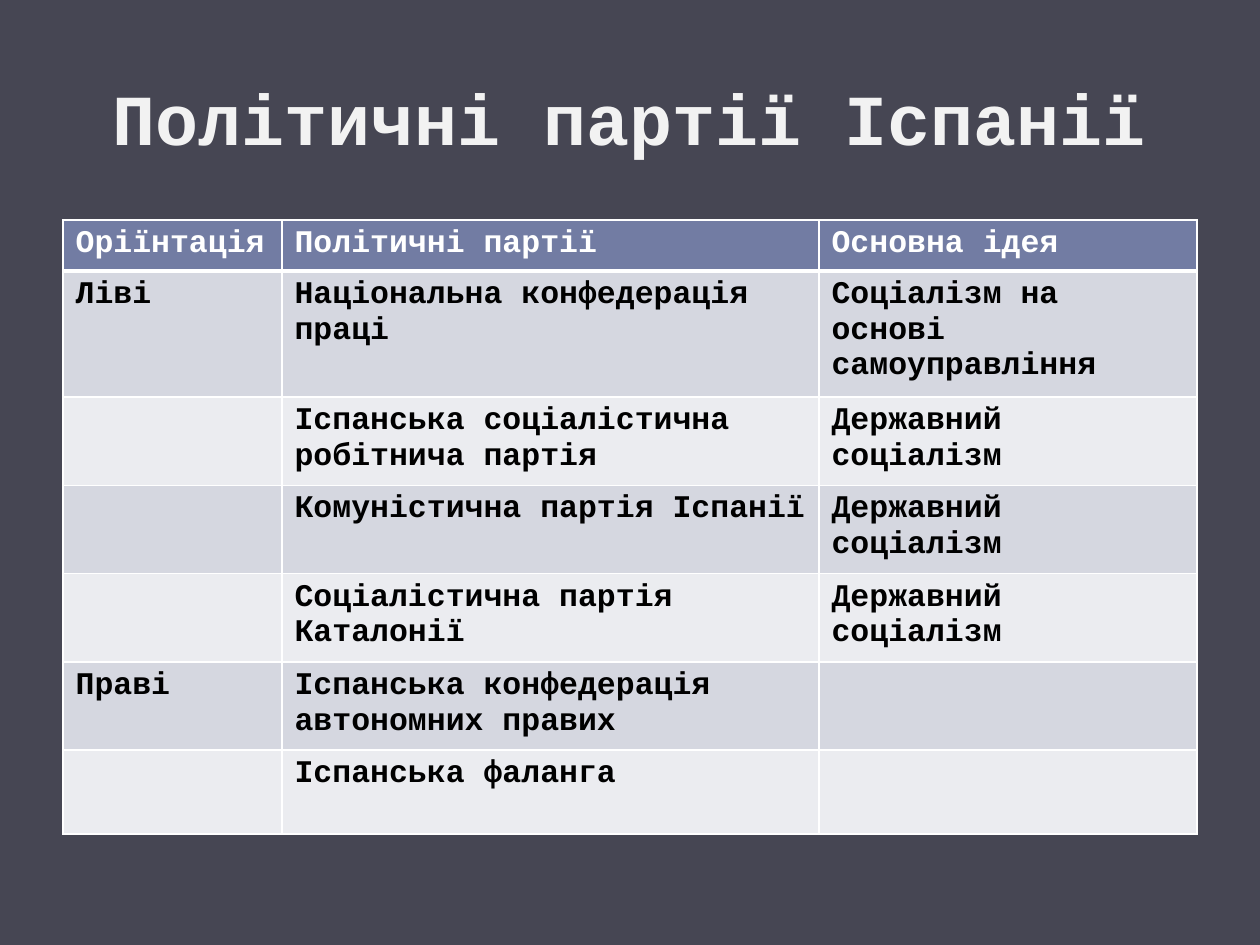
from dataclasses import dataclass

from lxml.etree import SubElement
from pptx import Presentation
from pptx.dml.color import RGBColor
from pptx.enum.text import MSO_ANCHOR as Anchor, PP_ALIGN as Align
from pptx.oxml.ns import qn
from pptx.slide import Slide
from pptx.util import Pt

EMU_PER_PX = 914400 / 126

ROWS = [
    ("Оріїнтація", "Політичні партії", "Основна ідея"),
    ("Ліві", "Національна конфедерація праці", "Соціалізм на основі самоуправління"),
    ("", "Іспанська соціалістична робітнича партія", "Державний соціалізм"),
    ("", "Комуністична партія Іспанії", "Державний соціалізм"),
    ("", "Соціалістична партія Каталонії", "Державний соціалізм"),
    ("Праві", "Іспанська конфедерація автономних правих", ""),
    ("", "Іспанська фаланга", ""),
]
COLUMN_WIDTHS = [219, 537, 378]
ROW_HEIGHTS = [51, 120] + [84] * 5


def px(value):
    return round(value * EMU_PER_PX)


def color(value):
    return RGBColor.from_string(value)


def write(frame, text, *, font, size, fill, bold=True, align=Align.LEFT):
    paragraph = frame.paragraphs[0]
    paragraph.alignment = align
    paragraph.font.size = Pt(size)
    if text:
        run = paragraph.add_run()
        run.text = text
        run.font.name = font
        run.font.size = Pt(size)
        run.font.bold = bold
        run.font.color.rgb = color(fill)


def set_border(cell, side, width, line_color):
    """Draw one side of a cell: L, R, T or B, to be added in that order."""
    properties = cell._tc.get_or_add_tcPr()
    line = SubElement(properties, qn(f"a:ln{side}"), w=str(Pt(width)))
    fill = SubElement(line, qn("a:solidFill"))
    SubElement(fill, qn("a:srgbClr"), val=line_color)


@dataclass
class SlideBuilder:
    slide: Slide
    font: str = "Courier New"
    background: str = "464653"
    title_color: str = "F2F2F2"
    header_fill: str = "727CA3"
    header_text: str = "FFFFFF"
    body_text: str = "000000"
    band_fills: tuple = ("D5D7E0", "EBECF0")
    border: str = "FFFFFF"

    def paint_background(self):
        fill = self.slide.background.fill
        fill.solid()
        fill.fore_color.rgb = color(self.background)

    def title(self, text, left, top, width, height):
        box = self.slide.shapes.add_textbox(px(left), px(top), px(width), px(height))
        frame = box.text_frame
        frame.word_wrap = True
        frame.vertical_anchor = Anchor.MIDDLE
        write(frame, text, font=self.font, size=41, fill=self.title_color, align=Align.CENTER)

    def table(self, rows, left, top, column_widths, row_heights):
        table = self.slide.shapes.add_table(
            len(rows), len(column_widths), px(left), px(top),
            px(sum(column_widths)), px(sum(row_heights))).table
        for column, width in zip(table.columns, column_widths):
            column.width = px(width)
        for row, height in zip(table.rows, row_heights):
            row.height = px(height)
        for row_index, texts in enumerate(rows):
            for column_index, text in enumerate(texts):
                self.cell(table.cell(row_index, column_index), text, row_index)

    def cell(self, cell, text, row_index):
        is_header = row_index == 0
        widths = {"L": 1, "R": 1, "T": 3 if row_index == 1 else 1, "B": 3 if is_header else 1}
        for side, width in widths.items():
            set_border(cell, side, width, self.border)
        cell.fill.solid()
        cell.fill.fore_color.rgb = color(
            self.header_fill if is_header else self.band_fills[(row_index - 1) % 2])
        write(cell.text_frame, text, font=self.font, size=18,
              fill=self.header_text if is_header else self.body_text)


def main():
    presentation = Presentation()
    presentation.slide_width = px(1260)
    presentation.slide_height = px(945)
    builder = SlideBuilder(presentation.slides.add_slide(presentation.slide_layouts[6]))
    builder.paint_background()
    builder.title("Політичні партії Іспанії", 63, 38, 1134, 157)
    builder.table(ROWS, 63, 220, COLUMN_WIDTHS, ROW_HEIGHTS)
    presentation.save("out.pptx")


if __name__ == "__main__":
    main()
